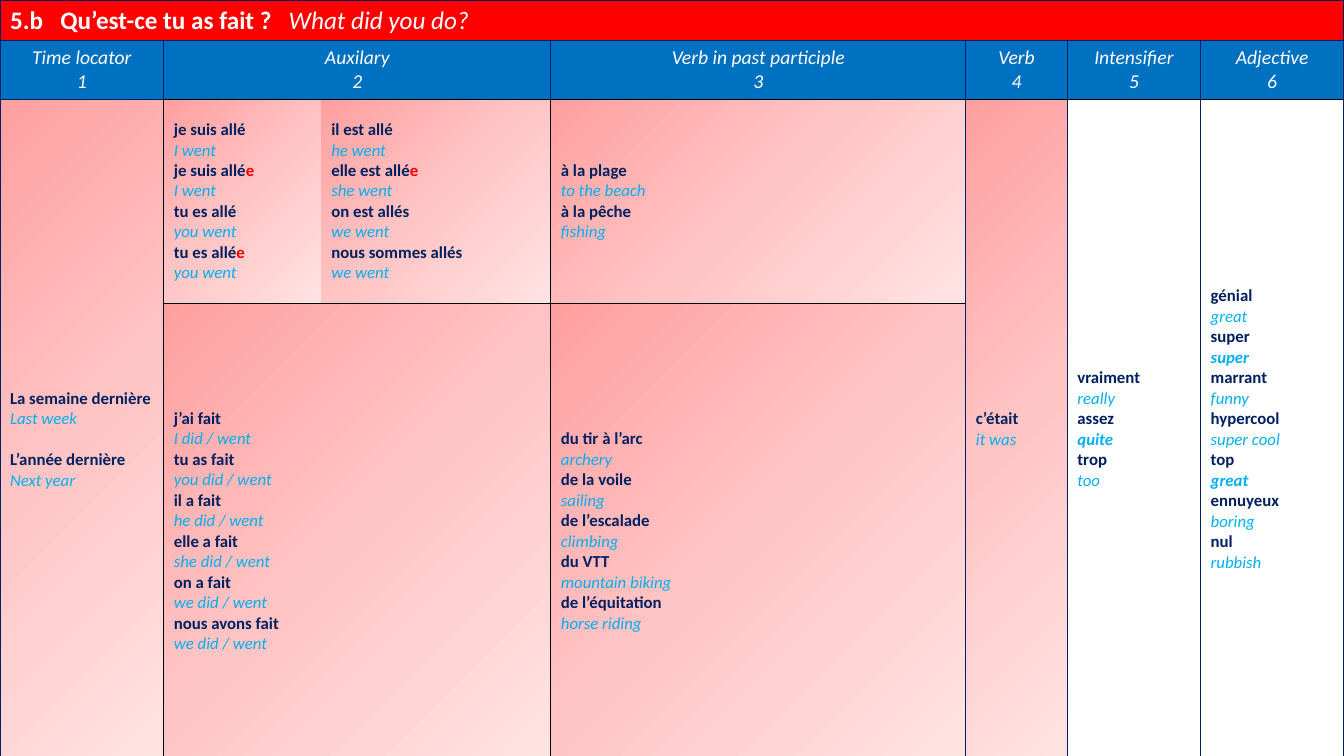
from lxml import etree
from pptx import Presentation
from pptx.dml.color import RGBColor
from pptx.enum.text import MSO_ANCHOR, PP_ALIGN
from pptx.oxml.ns import qn
from pptx.util import Pt

MIDDLE = MSO_ANCHOR.MIDDLE
CENTER = PP_ALIGN.CENTER

THEME = {
    "font": "Calibri",
    "title_size": Pt(18), "header_size": Pt(14), "body_size": Pt(12),
    "white": "FFFFFF", "red": "FF0000", "blue": "0070C0",
    "navy": "002060", "sky": "00B0F0", "black": "000000",
    "gradient": [(0, "FFA0A0"), (50, "FFC5C5"), (100, "FFE3E3")],
}
NO_STYLE = "{2D5ABB26-0587-4C30-8999-92F81FD0307C}"
COLUMN_WIDTHS = [117, 112.5, 164, 296.5, 72.5, 95.2, 102.3]
ROW_HEIGHTS = [28, 42, 145.5, 325.5]
TITLE_TABS = [36, 199]
LINE_HEIGHT = 14.6

HEADERS = [
    (0, "Time locator"), (1, "Auxilary"), (3, "Verb in past participle"),
    (4, "Verb"), (5, "Intensifier"), (6, "Adjective"),
]

# Border letters run left, right, top, bottom: N navy, K black, - none.
BODY = [
    (2, 0, 3, 0, "NKNN", True, [
        ("La semaine dernière", "Last week"), ("L’année dernière", "Next year")]),
    (2, 1, 2, 1, "K-KK", True, [
        ("je suis allé", "I went"), ("je suis allé*e", "I went"),
        ("tu es allé", "you went"), ("tu es allé*e", "you went")]),
    (2, 2, 2, 2, "-KKK", True, [
        ("il est allé", "he went"), ("elle est allé*e", "she went"),
        ("on est allés", "we went"), ("nous sommes allés", "we went")]),
    (2, 3, 2, 3, "KNKK", True, [
        ("à la plage", "to the beach"), ("à la pêche", "fishing")]),
    (2, 4, 3, 4, "NNKK", True, [("c’était", "it was")]),
    (2, 5, 3, 5, "NNKK", False, [
        ("vraiment", "really"), ("assez", "*quite"), ("trop", "too")]),
    (2, 6, 3, 6, "NNKK", False, [
        ("génial", "great"), ("super", "*super"), ("marrant", "funny"),
        ("hypercool", "super cool"), ("top", "*great"),
        ("ennuyeux", "boring"), ("nul", "rubbish")]),
    (3, 1, 3, 2, "KKKK", True, [
        ("j’ai fait", "I did / went"), ("tu as fait", "you did / went"),
        ("il a fait", "he did / went"), ("elle a fait", "she did / went"),
        ("on a fait", "we did / went"), ("nous avons fait", "we did / went")]),
    (3, 3, 3, 3, "KNKK", True, [
        ("du tir à l’arc", "archery"), ("de la voile", "sailing"),
        ("de l’escalade", "climbing"), ("du VTT", "mountain biking"),
        ("de l’équitation", "horse riding")]),
]


def add_run(paragraph, text, size, color, bold=False, italic=False):
    run = paragraph.add_run()
    run.text = text
    values = {"name": THEME["font"], "size": THEME[size], "bold": bold, "italic": italic}
    for name, value in values.items():
        setattr(run.font, name, value)
    run.font.color.rgb = RGBColor.from_string(THEME[color])


def style_cell(cell, borders, fill):
    properties = cell._tc.get_or_add_tcPr()
    for side, letter in zip("LRTB", borders):
        line = etree.SubElement(properties, qn(f"a:ln{side}"), w=str(Pt(1)))
        if letter == "-":
            etree.SubElement(line, qn("a:noFill"))
        else:
            solid = etree.SubElement(line, qn("a:solidFill"))
            color = THEME["navy" if letter == "N" else "black"]
            etree.SubElement(solid, qn("a:srgbClr"), val=color)
    if fill == "gradient":
        gradient = etree.SubElement(properties, qn("a:gradFill"), rotWithShape="1")
        stops = etree.SubElement(gradient, qn("a:gsLst"))
        for position, color in THEME["gradient"]:
            stop = etree.SubElement(stops, qn("a:gs"), pos=str(position * 1000))
            etree.SubElement(stop, qn("a:srgbClr"), val=color)
        etree.SubElement(gradient, qn("a:lin"), ang=str(45 * 60000), scaled="0")
    elif fill:
        cell.fill.solid()
        cell.fill.fore_color.rgb = RGBColor.from_string(THEME[fill])
    else:
        cell.fill.background()


presentation = Presentation()
presentation.slide_width = Pt(960)
presentation.slide_height = Pt(540)
slide = presentation.slides.add_slide(presentation.slide_layouts[6])

table = slide.shapes.add_table(
    len(ROW_HEIGHTS), len(COLUMN_WIDTHS), Pt(0), Pt(0),
    Pt(sum(COLUMN_WIDTHS)), Pt(sum(ROW_HEIGHTS))).table
table.first_row = False
table.horz_banding = False
table._tbl.tblPr.find(qn("a:tableStyleId")).text = NO_STYLE
for column, width in zip(table.columns, COLUMN_WIDTHS):
    column.width = Pt(width)
for row, height in zip(table.rows, ROW_HEIGHTS):
    row.height = Pt(height)

title = table.cell(0, 0)
title.merge(table.cell(0, 6))
style_cell(title, "NNNN", "red")
paragraph = title.text_frame.paragraphs[0]
tab_list = etree.SubElement(paragraph._p.get_or_add_pPr(), qn("a:tabLst"))
for tab in TITLE_TABS:
    etree.SubElement(tab_list, qn("a:tab"), pos=str(Pt(tab)), algn="l")
add_run(paragraph, "5.b\tQu’est-ce tu as fait ?\t", "title_size", "white", bold=True)
add_run(paragraph, "What did you do?", "title_size", "white", italic=True)

table.cell(1, 1).merge(table.cell(1, 2))
for number, (column_index, label) in enumerate(HEADERS, 1):
    cell = table.cell(1, column_index)
    style_cell(cell, "NNNN", "blue")
    paragraph = cell.text_frame.paragraphs[0]
    for text in (label, str(number)):
        paragraph.alignment = CENTER
        add_run(paragraph, text, "header_size", "white", italic=True)
        if text == label:
            paragraph = cell.text_frame.add_paragraph()

for top, left, bottom, right, borders, shaded, phrases in BODY:
    cell = table.cell(top, left)
    if (top, left) != (bottom, right):
        cell.merge(table.cell(bottom, right))
    style_cell(cell, borders, "gradient" if shaded else None)
    cell.vertical_anchor = MIDDLE
    if left == 0:
        cell.margin_top = Pt(3.6 + LINE_HEIGHT)
    for index, (french, english) in enumerate(phrases):
        frame = cell.text_frame
        paragraph = frame.add_paragraph() if index else frame.paragraphs[0]
        if left == 0 and index:
            paragraph.space_before = Pt(LINE_HEIGHT)
        stem, _, ending = french.partition("*")
        add_run(paragraph, stem, "body_size", "navy", bold=True)
        if ending:
            add_run(paragraph, ending, "body_size", "red", bold=True)
        add_run(frame.add_paragraph(), english.lstrip("*"), "body_size", "sky",
                bold=english.startswith("*"), italic=True)

presentation.save("out.pptx")
